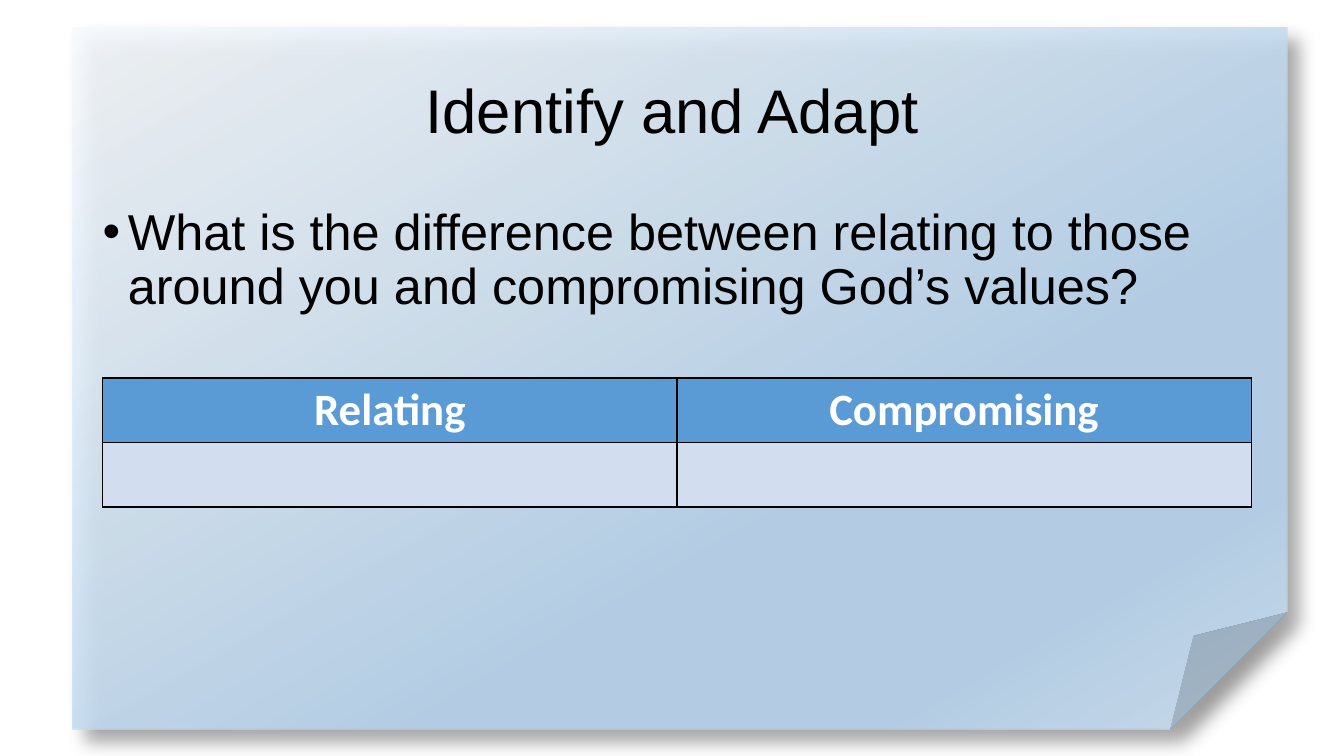
from dataclasses import dataclass
from typing import Any, Optional

import pptx
import pptx.dml.color
import pptx.enum.shapes
import pptx.enum.text
import pptx.oxml
import pptx.oxml.ns
import pptx.util

Inches = pptx.util.Inches
Pt = pptx.util.Pt
Align = pptx.enum.text.PP_ALIGN
Anchor = pptx.enum.text.MSO_ANCHOR
SPACE = pptx.oxml.ns.nsdecls("a")


@dataclass(frozen=True)
class Theme:
    ink: str = "000000"
    light: str = "FFFFFF"
    head: str = "5B9BD5"
    body: str = "D2DEEF"
    fade: tuple = ((0, "F7FAFD"), (64, "B5D2EC"), (83, "B5D2EC"), (100, "CEE1F2"))
    alpha: int = 87
    sans: str = "Arial"
    grid: str = "Calibri"
    title: int = 44
    text: int = 36
    cell: int = 32


@dataclass(frozen=True)
class Box:
    left: float
    top: float
    width: float
    height: float

    def place(self) -> tuple:
        return tuple(Inches(n) for n in (self.left, self.top, self.width, self.height))


@dataclass(frozen=True)
class Note:
    box: Box
    words: str
    size: int
    align: Any
    anchor: Any
    bullet: Optional[str] = None


THEME = Theme()
PAPER = Box(0.72, 0.27, 12.05, 6.97)
GRID = Box(1.02, 3.75, 11.39, 1.28)
NOTES = (
    Note(Box(0.92, 0.4, 11.5, 1.45), "Identify and Adapt",
         THEME.title, Align.CENTER, Anchor.MIDDLE),
    Note(Box(0.92, 2, 11.5, 4.76),
         "What is the difference between relating to those around you "
         "and compromising God’s values?",
         THEME.text, Align.LEFT, Anchor.TOP, "•"),
)
ROWS = (("Relating", "Compromising"), ("", ""))


def shade(code: str) -> Any:
    return pptx.dml.color.RGBColor.from_string(code)


def node(text: str) -> Any:
    head, rest = text.split(">", 1)
    slash = "/" if head.endswith("/") else ""
    return pptx.oxml.parse_xml(f"{head.rstrip('/')} {SPACE}{slash}>{rest}")


def write(para: Any, words: str, font: str, size: int, code: str, bold: bool = False) -> None:
    run = para.add_run()
    run.text = words
    run.font.name = font
    run.font.size = Pt(size)
    run.font.bold = bold
    run.font.color.rgb = shade(code)


def draw_paper(slide: Any, box: Box) -> None:
    kind = pptx.enum.shapes.MSO_SHAPE.FOLDED_CORNER
    paper = slide.shapes.add_shape(kind, *box.place())
    paper.line.fill.background()
    stops = "".join(
        f'<a:gs pos="{spot * 1000}"><a:srgbClr val="{code}">'
        f'<a:alpha val="{THEME.alpha * 1000}"/></a:srgbClr></a:gs>'
        for spot, code in THEME.fade
    )
    fill = node(f'<a:gradFill rotWithShape="1"><a:gsLst>{stops}</a:gsLst>'
                '<a:lin ang="3600000" scaled="0"/></a:gradFill>')
    props = paper.fill._xPr
    props.insert(2, fill)
    props.append(node(
        f'<a:effectLst><a:outerShdw blurRad="{Pt(13)}" dist="{Pt(13)}" dir="2700000" '
        f'algn="tl" rotWithShape="0"><a:srgbClr val="{THEME.ink}">'
        '<a:alpha val="40000"/></a:srgbClr></a:outerShdw></a:effectLst>'))


def draw_note(slide: Any, note: Note) -> None:
    frame = slide.shapes.add_textbox(*note.box.place()).text_frame
    frame.word_wrap = True
    frame.vertical_anchor = note.anchor
    para = frame.paragraphs[0]
    para.alignment = note.align
    para.line_spacing = 0.9
    if note.bullet:
        props = para._p.get_or_add_pPr()
        props.set("marL", str(Inches(0.25)))
        props.set("indent", str(Inches(-0.25)))
        props.append(node(f'<a:buFont typeface="{THEME.sans}"/>'))
        props.append(node(f'<a:buChar char="{note.bullet}"/>'))
    write(para, note.words, THEME.sans, note.size, THEME.ink)


def draw_cell(cell: Any, words: str, code: str) -> None:
    props = cell._tc.get_or_add_tcPr()
    for side in "LRTB":
        props.append(node(
            f'<a:ln{side} w="{Pt(1)}"><a:solidFill><a:srgbClr val="{THEME.ink}"/>'
            f'</a:solidFill></a:ln{side}>'))
    cell.fill.solid()
    cell.fill.fore_color.rgb = shade(code)
    if words:
        para = cell.text_frame.paragraphs[0]
        para.alignment = Align.CENTER
        write(para, words, THEME.grid, THEME.cell, THEME.light, True)


def draw_grid(slide: Any, box: Box, rows: tuple) -> None:
    table = slide.shapes.add_table(len(rows), len(rows[0]), *box.place()).table
    for row, line in enumerate(rows):
        code = THEME.body if row else THEME.head
        for col, words in enumerate(line):
            draw_cell(table.cell(row, col), words, code)


def main() -> None:
    deck = pptx.Presentation()
    deck.slide_width = Inches(13.33)
    deck.slide_height = Inches(7.5)
    slide = deck.slides.add_slide(deck.slide_layouts[6])
    draw_paper(slide, PAPER)
    for note in NOTES:
        draw_note(slide, note)
    draw_grid(slide, GRID, ROWS)
    deck.save("out.pptx")


if __name__ == "__main__":
    main()
